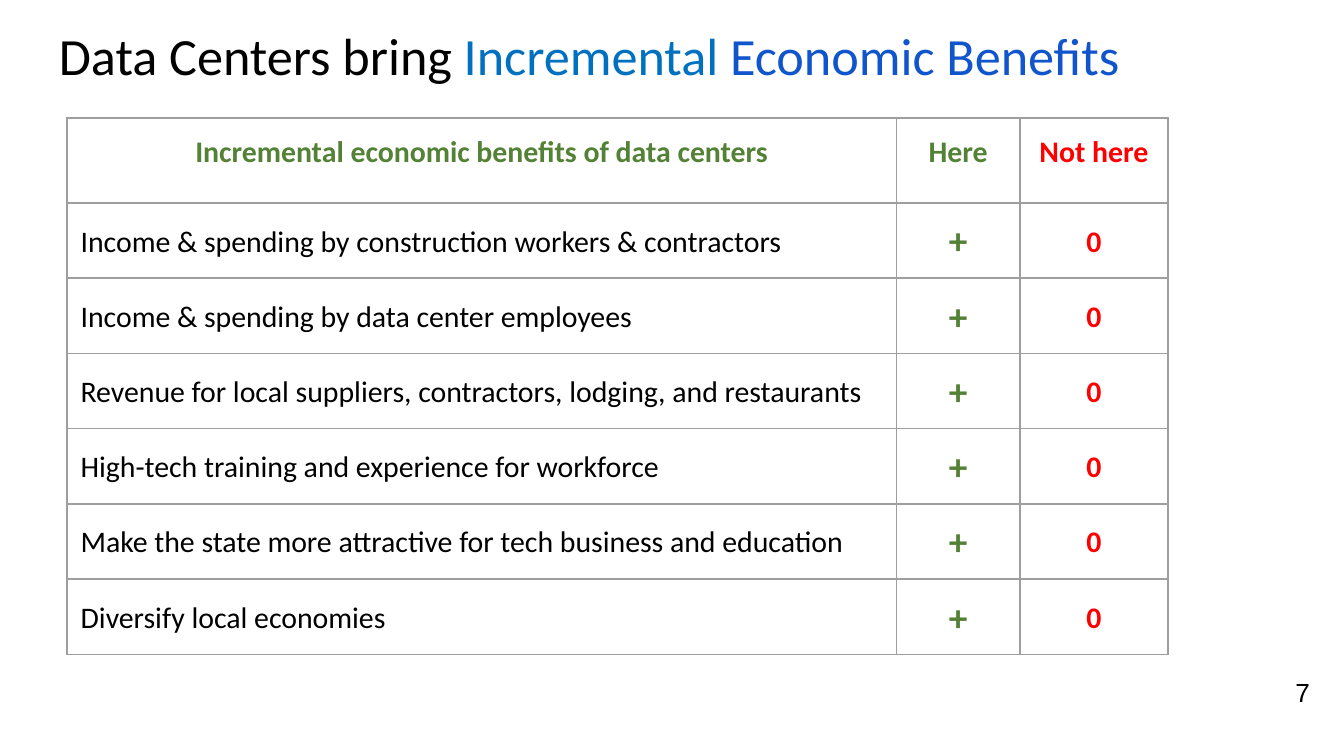
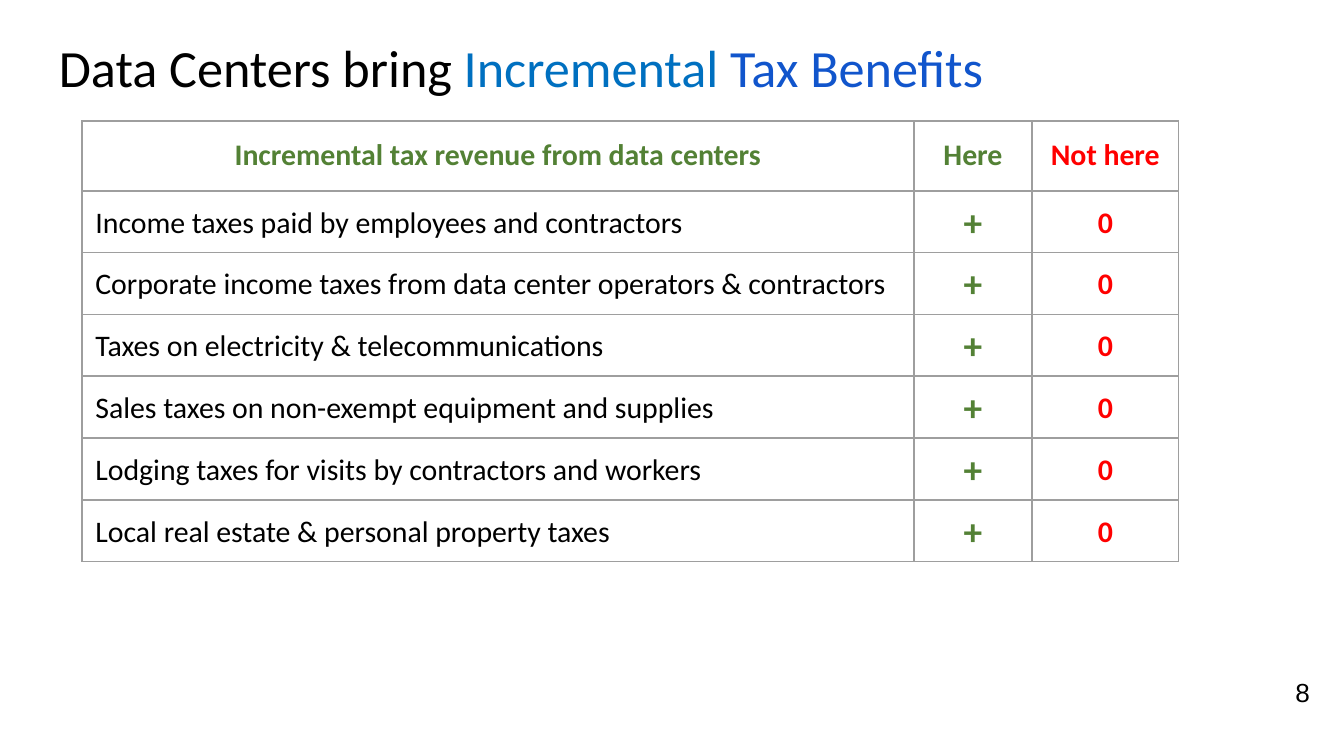
from lxml import etree
from pptx import Presentation
from pptx.dml.color import RGBColor
from pptx.enum.text import MSO_ANCHOR, PP_ALIGN
from pptx.oxml.ns import qn
from pptx.util import Inches, Pt

LEFT, CENTER = PP_ALIGN.LEFT, PP_ALIGN.CENTER
TOP, MIDDLE = MSO_ANCHOR.TOP, MSO_ANCHOR.MIDDLE

COLORS = {
    "text": "000000",
    "incremental": "0070C0",
    "benefit": "1155CC",
    "here": "538135",
    "not_here": "FF0000",
    "border": "9E9E9E",
    "background": "FFFFFF",
}
BODY_FONT, NUMBER_FONT = "Calibri", "Arial"
INSET = Inches(0.1)

SLIDES = [
    {
        "number": 7,
        "subject": "Economic Benefits",
        "title_top": 0.07,
        "table_at": (0.5, 0.88),
        "columns": (6.17, 0.92, 1.1),
        "header_height": 0.63,
        "row_height": 0.56,
        "heading": "Incremental economic benefits of data centers",
        "benefits": [
            "Income & spending by construction workers & contractors",
            "Income & spending by data center employees",
            "Revenue for local suppliers, contractors, lodging, and restaurants",
            "High-tech training and experience for workforce",
            "Make the state more attractive for tech business and education",
            "Diversify local economies",
        ],
    },
    {
        "number": 8,
        "subject": "Tax Benefits",
        "title_top": 0.16,
        "table_at": (0.61, 0.9),
        "columns": (6.19, 0.88, 1.09),
        "header_height": 0.52,
        "row_height": 0.46,
        "heading": "Incremental tax revenue from data centers",
        "benefits": [
            "Income taxes paid by employees and contractors",
            "Corporate income taxes from data center operators & contractors",
            "Taxes on electricity & telecommunications",
            "Sales taxes on non-exempt equipment and supplies",
            "Lodging taxes for visits by contractors and workers",
            "Local real estate & personal property taxes",
        ],
    },
]


def add_text(slide, left, top, width, height, runs, font, size):
    box = slide.shapes.add_textbox(Inches(left), Inches(top), Inches(width), Inches(height))
    frame = box.text_frame
    frame.word_wrap = True
    frame.margin_left = frame.margin_right = INSET
    frame.margin_top = frame.margin_bottom = INSET
    paragraph = frame.paragraphs[0]
    paragraph.font.name, paragraph.font.size = font, Pt(size)
    for text, color in runs:
        run = paragraph.add_run()
        run.text = text
        run.font.color.rgb = RGBColor.from_string(COLORS[color])


def fill_cell(cell, text, color, size, bold, align, anchor, pad):
    cell.margin_left = cell.margin_right = INSET
    cell.margin_top = cell.margin_bottom = pad
    cell.vertical_anchor = anchor
    paragraph = cell.text_frame.paragraphs[0]
    paragraph.text = text
    paragraph.alignment, paragraph.line_spacing = align, 1.07
    font = paragraph.font
    font.name, font.size, font.bold = BODY_FONT, Pt(size), bold
    font.color.rgb = RGBColor.from_string(COLORS[color])
    # Borders come before the fill in the cell properties
    properties = cell._tc.get_or_add_tcPr()
    for side in ("a:lnL", "a:lnR", "a:lnT", "a:lnB"):
        line = etree.SubElement(properties, qn(side), w=str(Pt(1)))
        solid = etree.SubElement(line, qn("a:solidFill"))
        etree.SubElement(solid, qn("a:srgbClr"), val=COLORS["border"])
    cell.fill.background()


# Widescreen 16:9
prs = Presentation()
prs.slide_width = Inches(10)
prs.slide_height = prs.slide_width * 9 // 16

for content in SLIDES:
    slide = prs.slides.add_slide(prs.slide_layouts[6])
    slide.background.fill.solid()
    slide.background.fill.fore_color.rgb = RGBColor.from_string(COLORS["background"])

    # Title and slide number
    title = [
        ("Data Centers bring ", "text"),
        ("Incremental ", "incremental"),
        (content["subject"], "benefit"),
    ]
    add_text(slide, 0.34, content["title_top"], 9.32, 0.63, title, BODY_FONT, 28)
    add_text(slide, 9.54, 4.93, 0.27, 0.37, [(str(content["number"]), "text")], NUMBER_FONT, 14)

    # Table grid
    benefits, columns = content["benefits"], content["columns"]
    left, top = content["table_at"]
    heights = [content["header_height"]] + [content["row_height"]] * len(benefits)
    comparison = slide.shapes.add_table(
        len(heights), len(columns), Inches(left), Inches(top),
        Inches(sum(columns)), Inches(sum(heights)),
    ).table
    comparison.first_row = comparison.horz_banding = False
    for column, width in zip(comparison.columns, columns):
        column.width = Inches(width)
    for row, height in zip(comparison.rows, heights):
        row.height = Inches(height)

    # Header row
    headings = [(content["heading"], "here"), ("Here", "here"), ("Not here", "not_here")]
    for col, (text, color) in enumerate(headings):
        fill_cell(comparison.cell(0, col), text, color, 16, True, CENTER, TOP, INSET)

    # One row per benefit
    for row, benefit in enumerate(benefits, start=1):
        entries = [
            (benefit, "text", 16, False, LEFT),
            ("+", "here", 20, True, CENTER),
            ("0", "not_here", 16, True, CENTER),
        ]
        for col, entry in enumerate(entries):
            fill_cell(comparison.cell(row, col), *entry, MIDDLE, 0)

prs.save("out.pptx")
